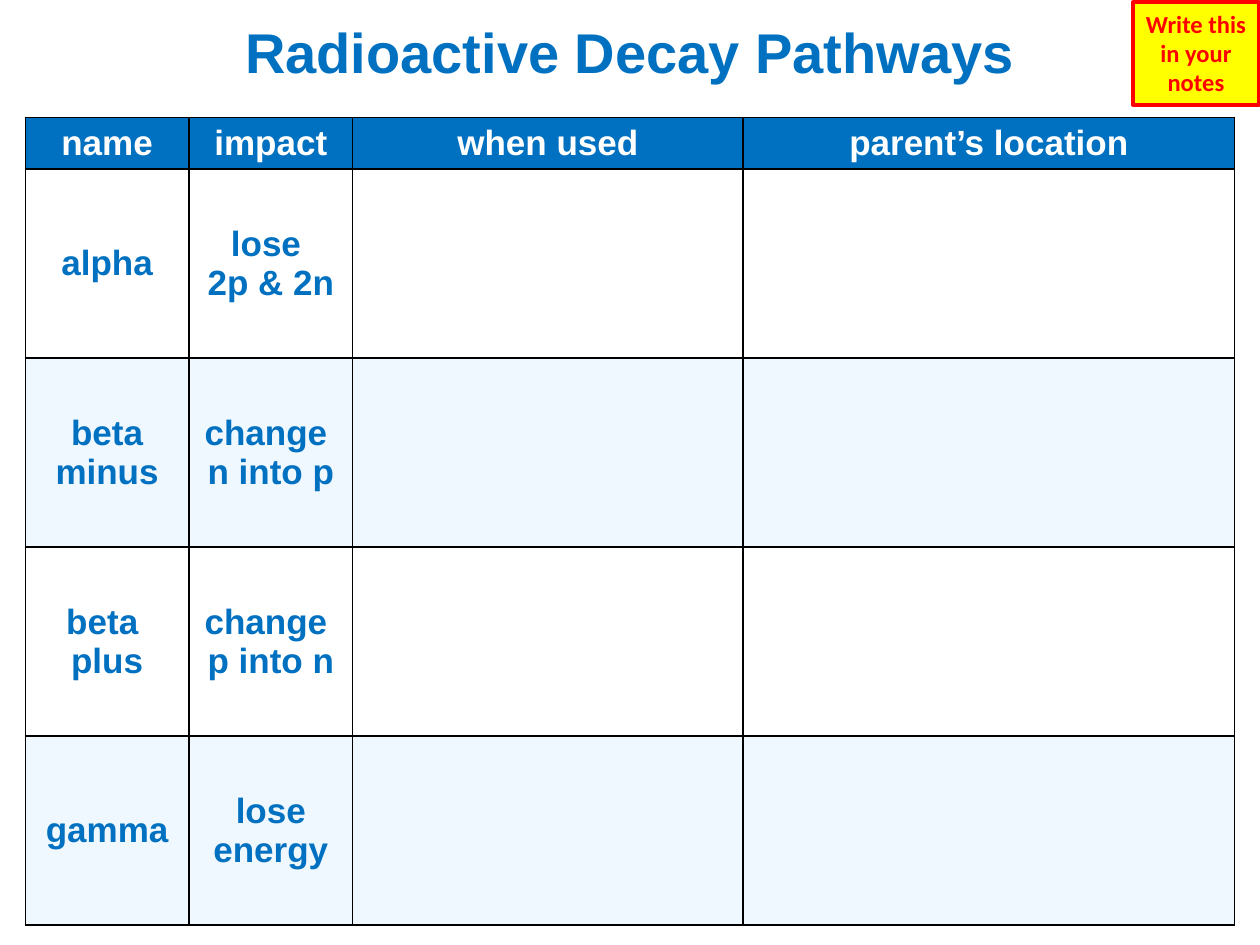
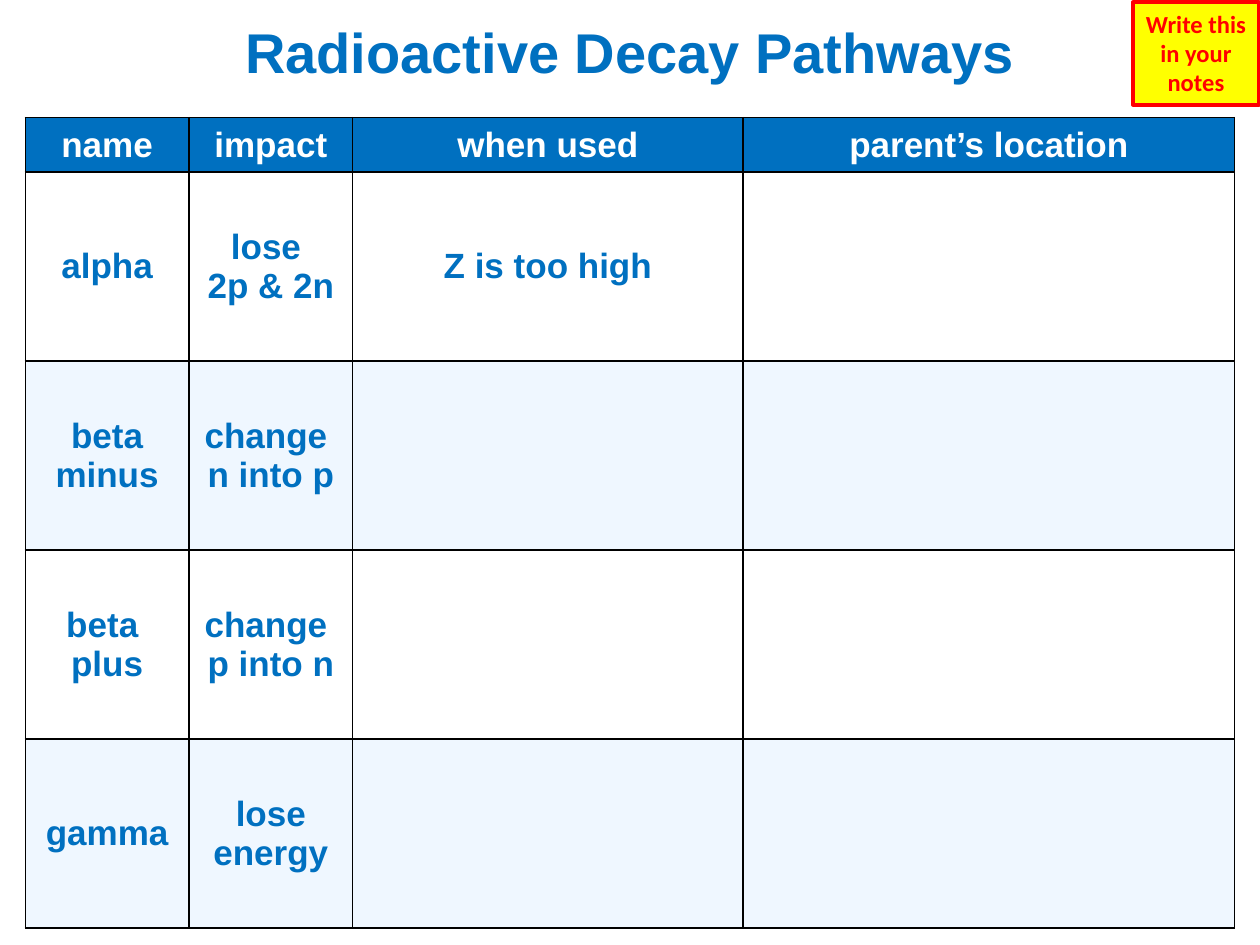
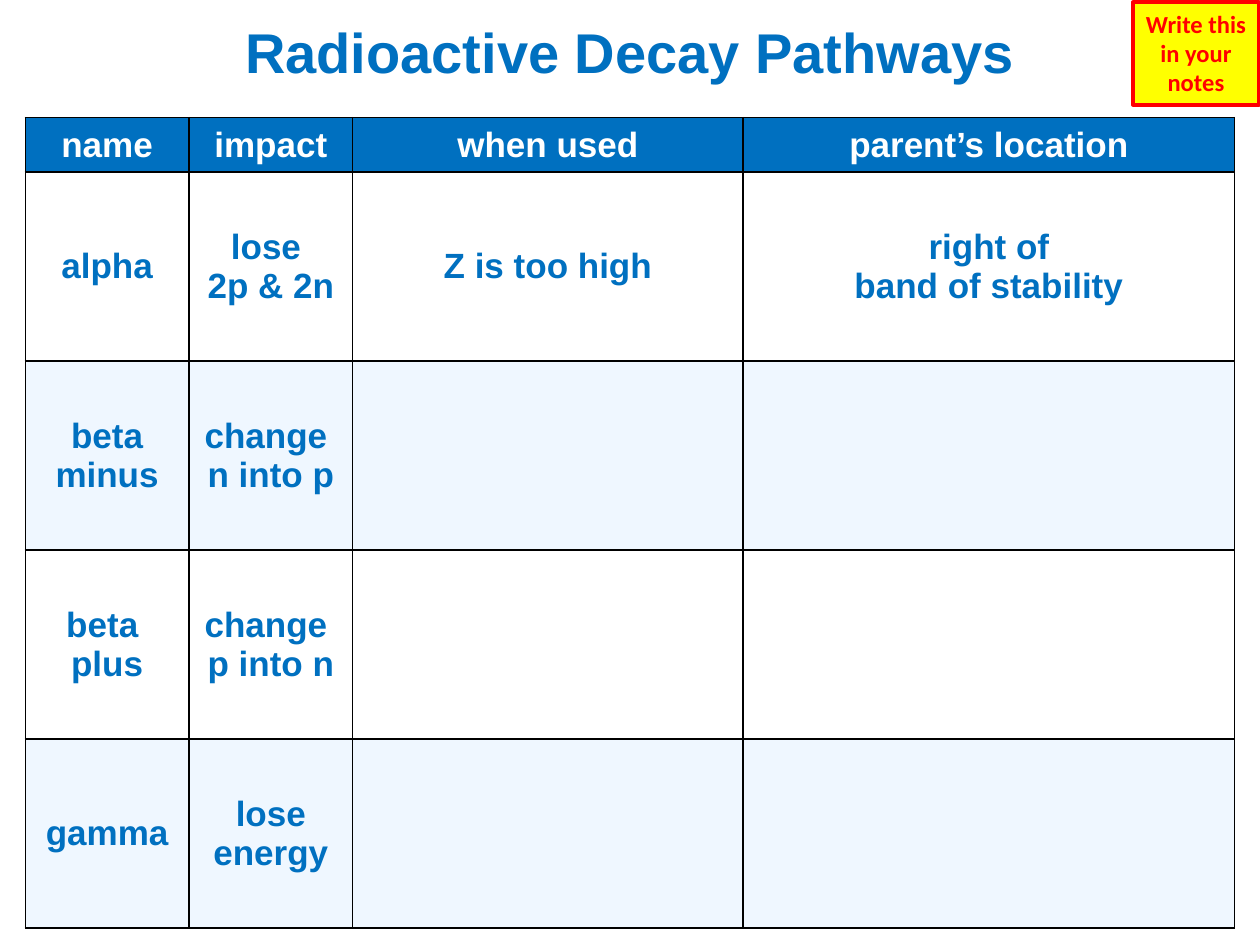
from lxml.etree import SubElement
from pptx import Presentation
from pptx.dml.color import RGBColor
from pptx.enum.shapes import MSO_SHAPE
from pptx.enum.text import MSO_ANCHOR, MSO_AUTO_SIZE, PP_ALIGN
from pptx.oxml.ns import qn
from pptx.util import Cm, Pt

COLORS = {
    "blue": "0070C0",
    "pale": "EFF7FF",
    "white": "FFFFFF",
    "black": "000000",
    "yellow": "FFFF00",
    "red": "FF0000",
}
COLUMN_WIDTHS = [3.3, 3.3, 7.87, 9.91]
TITLE_HEIGHT = 2.03
PATHWAY_HEIGHT = 3.81
HEADINGS = ["name", "impact", "when used", "parent’s location"]
PATHWAYS = [
    ["alpha", "lose \n2p & 2n"],
    ["beta\nminus", "change \nn into p"],
    ["beta \nplus", "change \np into n"],
    ["gamma", "lose\nenergy"],
]
# Header row height and the alpha answers shown so far, slide by slide
STEPS = [
    (1.04, []),
    (1.1, ["Z is too high"]),
    (1.1, ["Z is too high", "right of\nband of stability"]),
]


def write(frame, text, size=20, color="blue", font="Arial"):
    """Fill a text frame with bold centred text, one paragraph per line."""
    for index, line in enumerate(text.split("\n")):
        para = frame.paragraphs[0] if index == 0 else frame.add_paragraph()
        para.alignment = PP_ALIGN.CENTER
        span = para.add_run()
        span.text = line
        span.font.size = Pt(size)
        span.font.bold = True
        span.font.name = font
        span.font.color.rgb = RGBColor.from_string(COLORS[color])


def add_borders(cell, sides):
    properties = cell._tc.get_or_add_tcPr()
    for side in sides:
        border = SubElement(properties, qn(f"a:ln{side}"), w=str(Pt(1)))
        fill = SubElement(border, qn("a:solidFill"))
        SubElement(fill, qn("a:srgbClr"), val=COLORS["black"])


deck = Presentation()
deck.slide_width = Cm(25.4)
deck.slide_height = Cm(19.05)

for header_height, answers in STEPS:
    slide = deck.slides.add_slide(deck.slide_layouts[6])

    # Decay table, with the title as its merged first row
    heights = [TITLE_HEIGHT, header_height] + [PATHWAY_HEIGHT] * len(PATHWAYS)
    table = slide.shapes.add_table(
        len(heights), len(COLUMN_WIDTHS), Cm(0.51), Cm(0.34),
        Cm(sum(COLUMN_WIDTHS)), Cm(sum(heights)),
    ).table
    table.first_row = False
    table.horz_banding = False
    for column, width in zip(table.columns, COLUMN_WIDTHS):
        column.width = Cm(width)
    for row, height in zip(table.rows, heights):
        row.height = Cm(height)

    for cell in table.rows[0].cells:
        add_borders(cell, "B")
        cell.fill.background()
    title = table.cell(0, 0)
    title.merge(table.cell(0, len(COLUMN_WIDTHS) - 1))
    write(title.text_frame, "Radioactive Decay Pathways", size=32)

    body = [HEADINGS, PATHWAYS[0] + answers] + PATHWAYS[1:]
    for row_index, texts in enumerate(body):
        is_header = row_index == 0
        band = "blue" if is_header else "white" if row_index % 2 else "pale"
        for column_index in range(len(COLUMN_WIDTHS)):
            cell = table.cell(row_index + 1, column_index)
            add_borders(cell, "LRTB")
            cell.fill.solid()
            cell.fill.fore_color.rgb = RGBColor.from_string(COLORS[band])
            cell.vertical_anchor = MSO_ANCHOR.MIDDLE
            if column_index < len(texts):
                write(cell.text_frame, texts[column_index],
                      color="white" if is_header else "blue")

    # Reminder in the top right corner
    note = slide.shapes.add_shape(
        MSO_SHAPE.RECTANGLE, Cm(22.84), Cm(0.05), Cm(2.54), Cm(2.06))
    note.shadow.inherit = False
    note.fill.solid()
    note.fill.fore_color.rgb = RGBColor.from_string(COLORS["yellow"])
    note.line.color.rgb = RGBColor.from_string(COLORS["red"])
    note.line.width = Pt(2.25)
    note.text_frame.word_wrap = True
    note.text_frame.auto_size = MSO_AUTO_SIZE.SHAPE_TO_FIT_TEXT
    note.text_frame.vertical_anchor = MSO_ANCHOR.TOP
    write(note.text_frame, "Write this in your notes",
          size=14, color="red", font="Calibri")

deck.save("out.pptx")
